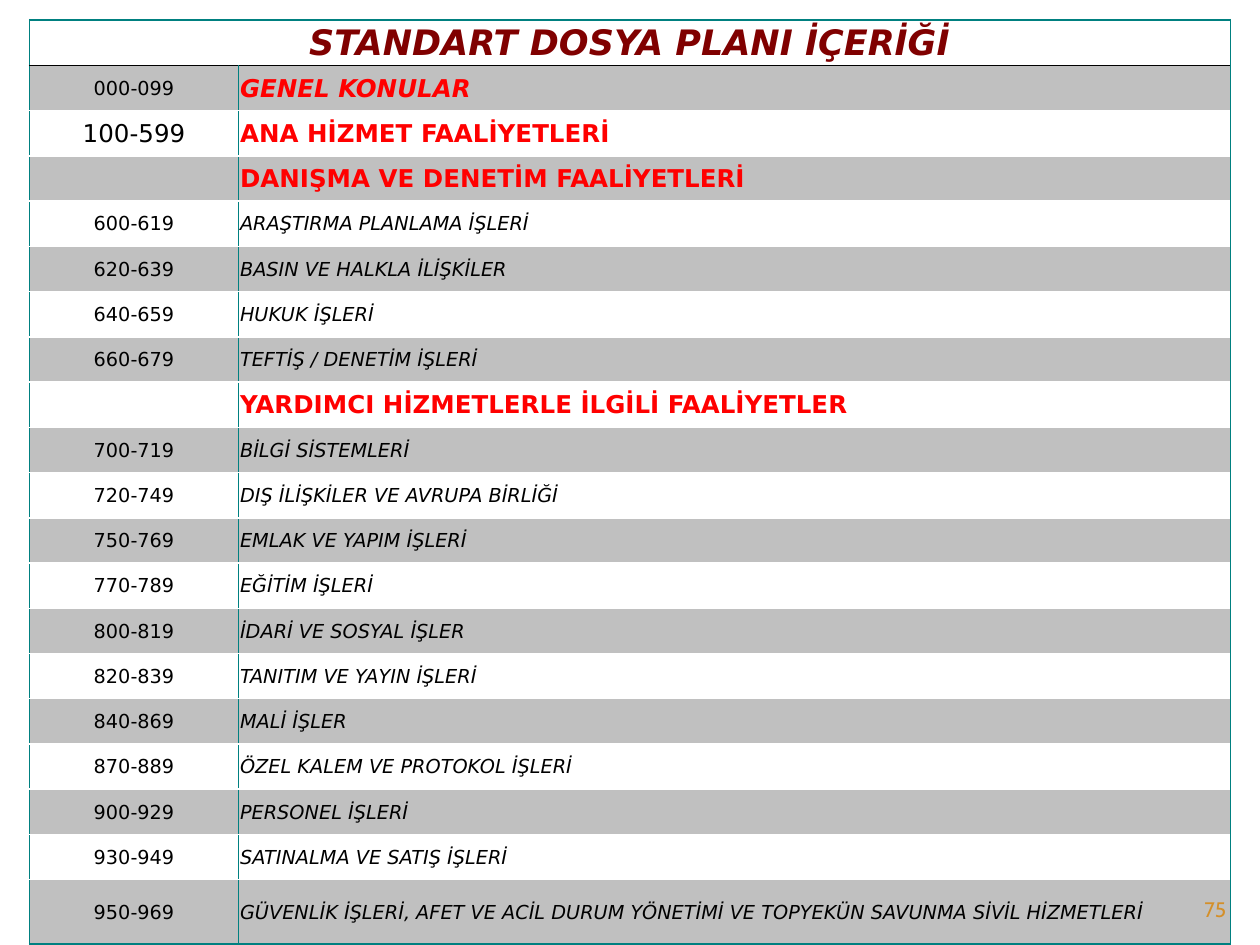
from typing import NamedTuple

from lxml.etree import SubElement
from pptx import Presentation
from pptx.dml.color import RGBColor
from pptx.enum.text import MSO_ANCHOR as Anchor, PP_ALIGN as Align
from pptx.oxml.ns import qn
from pptx.util import Pt

SANS = "DejaVu Sans"
TEAL, BLACK, RED = "008080", "000000", "FF0000"
BANDS = ("FFFFFF", "C0C0C0")
ROW, LAST = 25.87, 36.8


class Style(NamedTuple):
    size: float
    color: str
    bold: bool = False
    italic: bool = False
    face: str = SANS


class Row(NamedTuple):
    code: str
    name: str
    look: Style
    mark: Style


TITLE = Style(20, "800000", True, True)
HEAD = Style(14, RED, True)
ITEM = Style(11, BLACK, italic=True)
CODE = Style(11, BLACK)
PAGE = Style(12, "D48F29", face="Cabin")


def item(code: str, name: str) -> Row:
    return Row(code, name, ITEM, CODE)


ROWS = [
    Row("000-099", "GENEL KONULAR", HEAD._replace(italic=True), CODE),
    Row("100-599", "ANA HİZMET FAALİYETLERİ", HEAD, CODE._replace(size=14)),
    Row("", "DANIŞMA VE DENETİM FAALİYETLERİ", HEAD, CODE),
    item("600-619", "ARAŞTIRMA PLANLAMA İŞLERİ"),
    item("620-639", "BASIN VE HALKLA İLİŞKİLER"),
    item("640-659", "HUKUK İŞLERİ"),
    item("660-679", "TEFTİŞ / DENETİM İŞLERİ"),
    Row("", "YARDIMCI HİZMETLERLE İLGİLİ FAALİYETLER", HEAD, CODE),
    item("700-719", "BİLGİ SİSTEMLERİ"),
    item("720-749", "DIŞ İLİŞKİLER VE AVRUPA BİRLİĞİ"),
    item("750-769", "EMLAK VE YAPIM İŞLERİ"),
    item("770-789", "EĞİTİM İŞLERİ"),
    item("800-819", "İDARİ VE SOSYAL İŞLER"),
    item("820-839", "TANITIM VE YAYIN İŞLERİ"),
    item("840-869", "MALİ İŞLER"),
    item("870-889", "ÖZEL KALEM VE PROTOKOL İŞLERİ"),
    item("900-929", "PERSONEL İŞLERİ"),
    item("930-949", "SATINALMA VE SATIŞ İŞLERİ"),
    item("950-969", "GÜVENLİK İŞLERİ, AFET VE ACİL DURUM YÖNETİMİ "
                    "VE TOPYEKÜN SAVUNMA SİVİL HİZMETLERİ"),
]


def rgb(code: str) -> RGBColor:
    return RGBColor.from_string(code)


def write(frame, text: str, style: Style, align: Align) -> None:
    para = frame.paragraphs[0]
    para.alignment = align
    font = para.font
    if text:
        run = para.add_run()
        run.text = text
        font = run.font
    looks = {"size": Pt(style.size), "name": style.face,
             "bold": style.bold, "italic": style.italic}
    for key, value in looks.items():
        setattr(font, key, value)
    font.color.rgb = rgb(style.color)


def edge(cell, side: str, color: str, width: float) -> None:
    line = SubElement(cell._tc.get_or_add_tcPr(), qn(f"a:ln{side}"),
                      w=str(int(Pt(width))))
    fill = SubElement(line, qn("a:solidFill"))
    SubElement(fill, qn("a:srgbClr"), val=color)


def dress(cell, row: int, end: int) -> None:
    # Borders must come before the fill
    edge(cell, "L", TEAL, 0.5)
    edge(cell, "R", TEAL, 0.5)
    if row == 0:
        edge(cell, "T", TEAL, 1.5)
        edge(cell, "B", BLACK, 0.5)
    elif row == 1:
        edge(cell, "T", BLACK, 0.5)
    elif row == end:
        edge(cell, "B", TEAL, 1.5)
    cell.fill.solid()
    cell.fill.fore_color.rgb = rgb(BANDS[row % 2])
    traits = {"margin_left": Pt(0.7), "margin_right": Pt(0.7),
              "margin_top": Pt(0.7), "margin_bottom": 0,
              "vertical_anchor": Anchor.MIDDLE}
    for key, value in traits.items():
        setattr(cell, key, value)


def plan(slide) -> None:
    end = len(ROWS)
    wide = (119.8, 566.4)
    table = slide.shapes.add_table(
        end + 1, 2, Pt(16.7), Pt(11.5),
        Pt(sum(wide)), Pt(end * ROW + LAST)).table
    for col, width in zip(table.columns, wide):
        col.width = Pt(width)
    for num, line in enumerate(table.rows):
        line.height = Pt(LAST if num == end else ROW)
        for cell in line.cells:
            dress(cell, num, end)

    # Heading across both columns
    top = table.cell(0, 0)
    top.merge(table.cell(0, 1))
    write(top.text_frame, "STANDART DOSYA PLANI İÇERİĞİ", TITLE, Align.CENTER)

    # Codes and subjects
    for num, row in enumerate(ROWS, 1):
        write(table.cell(num, 0).text_frame, row.code, row.mark, Align.CENTER)
        write(table.cell(num, 1).text_frame, row.name, row.look, Align.LEFT)


def page(slide, text: str) -> None:
    box = slide.shapes.add_textbox(Pt(648), Pt(509.8), Pt(59.8), Pt(19.4))
    frame = box.text_frame
    frame.word_wrap = True
    frame.vertical_anchor = Anchor.MIDDLE
    write(frame, text, PAGE, Align.RIGHT)


def main() -> None:
    deck = Presentation()
    deck.slide_width, deck.slide_height = Pt(720), Pt(540)
    slide = deck.slides.add_slide(deck.slide_layouts[6])
    plan(slide)
    page(slide, "75")
    deck.save("out.pptx")


if __name__ == "__main__":
    main()
